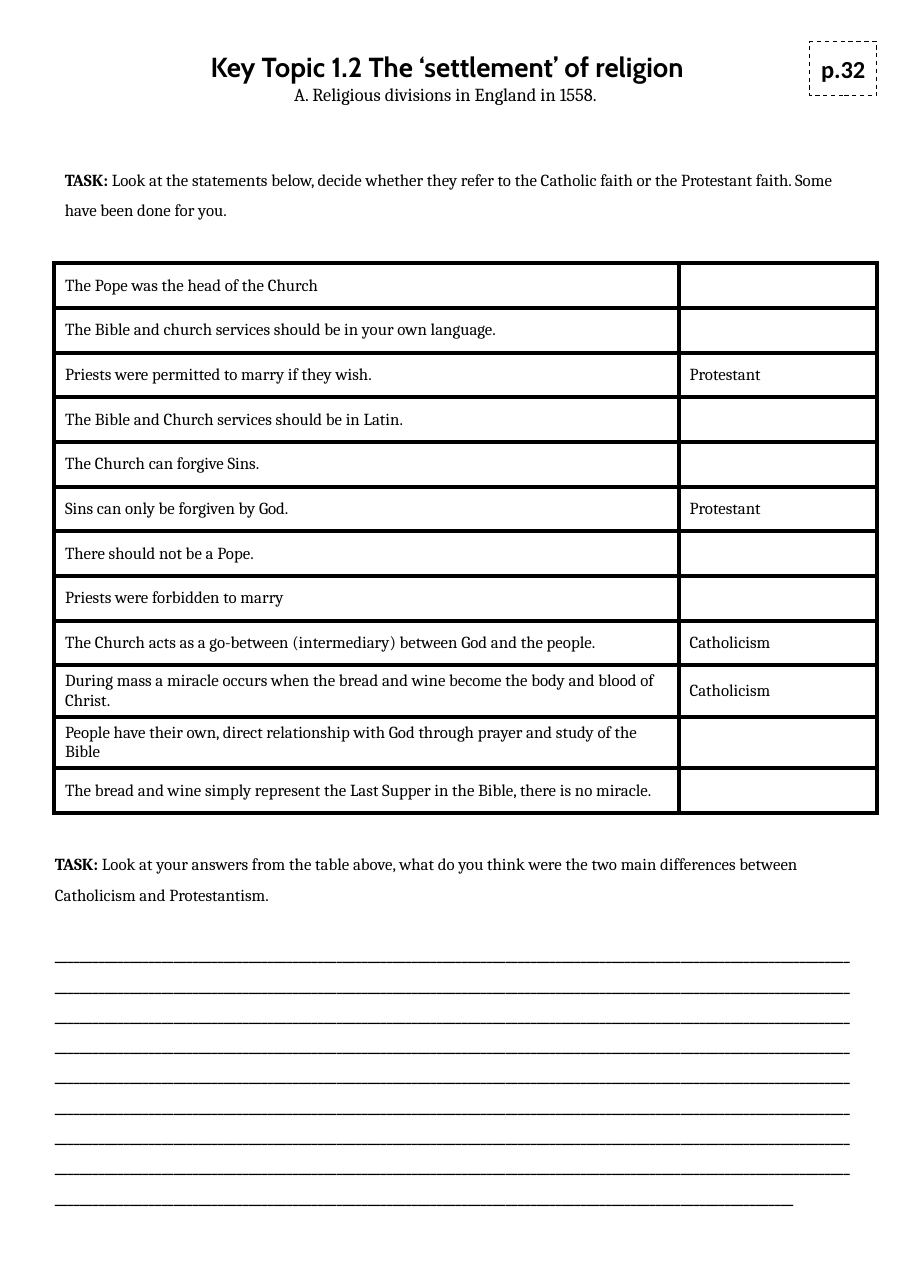
from dataclasses import dataclass

from lxml import etree
from pptx import Presentation
from pptx.dml.color import RGBColor
from pptx.enum.dml import MSO_LINE
from pptx.enum.shapes import MSO_SHAPE
from pptx.enum.text import MSO_ANCHOR, PP_ALIGN
from pptx.oxml.ns import qn
from pptx.util import Inches, Pt


@dataclass(frozen=True)
class Theme:
    ink: str = "000000"
    paper: str = "FFFFFF"
    title_font: str = "Cabin"
    body_font: str = "Cambria"
    page_font: str = "Calibri"
    title: float = 18
    page: float = 16
    subtitle: float = 12
    body: float = 11
    border: float = 3
    dash: float = 0.75
    answer_gap: float = 19.8


THEME = Theme()
ANSWER_RULES = "_" * 1134

STATEMENTS = [
    ("The Pope was the head of the Church", ""),
    ("The Bible and church services should be in your own language.", ""),
    ("Priests were permitted to marry if they wish.", "Protestant"),
    ("The Bible and Church services should be in Latin.", ""),
    ("The Church can forgive Sins.", ""),
    ("Sins can only be forgiven by God.", "Protestant"),
    ("There should not be a Pope.", ""),
    ("Priests were forbidden to marry", ""),
    ("The Church acts as a go-between (intermediary) between God and the people.", "Catholicism"),
    ("During mass a miracle occurs when the bread and wine become the body and blood of Christ.",
     "Catholicism"),
    ("People have their own, direct relationship with God through prayer and study of the Bible", ""),
    ("The bread and wine simply represent the Last Supper in the Bible, there is no miracle.", ""),
]


def style(p, size, font=THEME.body_font, bold=None, align=None):
    p.font.size = Pt(size)
    p.font.name = font
    p.font.bold = bold
    p.font.color.rgb = RGBColor.from_string(THEME.ink)
    p.alignment = align


def add_text_box(s, left, top, width, height):
    tf = s.shapes.add_textbox(*map(Inches, (left, top, width, height))).text_frame
    tf.word_wrap = True
    return tf


def add_heading(s, title, subtitle):
    tf = add_text_box(s, 0.77, 0.37, 6.58, 0.67)
    tf.vertical_anchor = MSO_ANCHOR.MIDDLE
    tf.margin_top = tf.margin_bottom = Inches(0.1)
    p = tf.paragraphs[0]
    p.text = title
    style(p, THEME.title, THEME.title_font, True, PP_ALIGN.CENTER)
    p = tf.add_paragraph()
    p.text = subtitle
    style(p, THEME.subtitle, align=PP_ALIGN.CENTER)


def add_page_tag(s, label):
    sp = s.shapes.add_shape(MSO_SHAPE.RECTANGLE, *map(Inches, (7.35, 0.38, 0.61, 0.49)))
    sp.shadow.inherit = False
    sp.fill.solid()
    sp.fill.fore_color.rgb = RGBColor.from_string(THEME.paper)
    sp.line.color.rgb = RGBColor.from_string(THEME.ink)
    sp.line.width = Pt(THEME.dash)
    sp.line.dash_style = MSO_LINE.DASH
    tf = sp.text_frame
    tf.word_wrap = False
    tf.vertical_anchor = MSO_ANCHOR.MIDDLE
    p = tf.paragraphs[0]
    p.text = label
    style(p, THEME.page, THEME.page_font, True, PP_ALIGN.CENTER)


def add_task(s, left, top, height, task):
    tf = add_text_box(s, left, top, 7.47, height)
    p = tf.paragraphs[0]
    p.line_spacing = 1.5
    style(p, THEME.body)
    r = p.add_run()
    r.text = "TASK: "
    r.font.bold = True
    p.add_run().text = task
    return tf


def add_answer_rules(tf):
    p = tf.add_paragraph()
    p.text = ANSWER_RULES
    p.line_spacing = 1.5
    p.space_before = Pt(THEME.answer_gap)
    style(p, THEME.body, bold=True)


def add_borders(cell):
    tc_pr = cell._tc.get_or_add_tcPr()
    for side in ("a:lnL", "a:lnR", "a:lnT", "a:lnB"):
        ln = etree.SubElement(tc_pr, qn(side), w=str(Pt(THEME.border)))
        fill = etree.SubElement(ln, qn("a:solidFill"))
        etree.SubElement(fill, qn("a:srgbClr"), val=THEME.ink)


def add_statement_table(s):
    table = s.shapes.add_table(
        len(STATEMENTS), 2, *map(Inches, (0.49, 2.39, 7.47, 4.87))).table
    table.first_row = table.horz_banding = False
    for column, width in zip(table.columns, (5.67, 1.8)):
        column.width = Inches(width)
    for row, texts in zip(table.rows, STATEMENTS):
        for cell, text in zip(row.cells, texts):
            add_borders(cell)
            cell.fill.background()
            cell.vertical_anchor = MSO_ANCHOR.MIDDLE
            p = cell.text_frame.paragraphs[0]
            p.text = text
            style(p, THEME.body)


def main():
    prs = Presentation()
    prs.slide_width, prs.slide_height = Inches(8.27), Inches(11.69)
    s = prs.slides.add_slide(prs.slide_layouts[6])
    add_heading(s, "Key Topic 1.2 The ‘settlement’ of religion",
                "A. Religious divisions in England in 1558. ")
    add_page_tag(s, "p.32")
    add_task(s, 0.49, 1.4, 0.63,
             "Look at the statements below, decide whether they refer to the Catholic faith "
             "or the Protestant faith. Some have been done for you.")
    add_statement_table(s)
    tf = add_task(s, 0.4, 7.61, 3.4,
                  "Look at your answers from the table above, what do you think were the two "
                  "main differences between Catholicism and Protestantism.")
    add_answer_rules(tf)
    prs.save("out.pptx")


if __name__ == "__main__":
    main()
